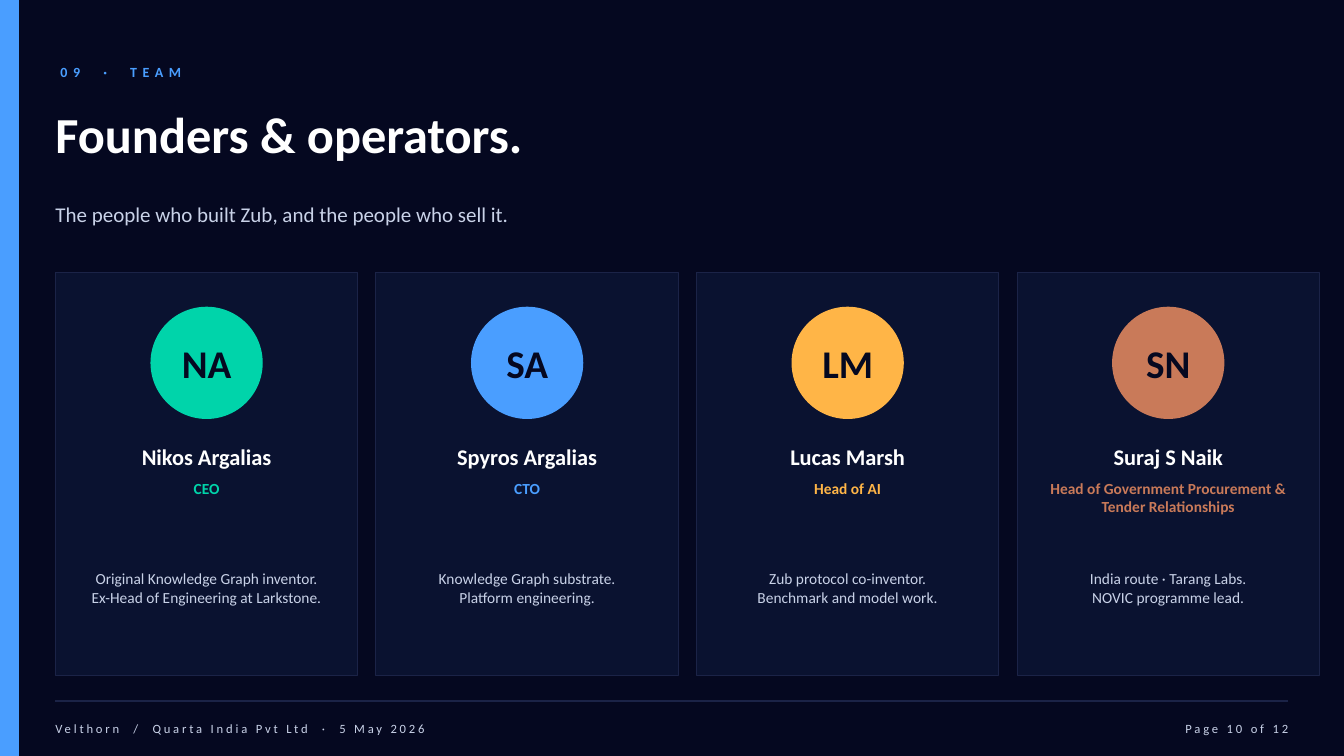
from dataclasses import dataclass

from lxml import etree
from pptx import Presentation
from pptx import util as u
from pptx.dml.color import RGBColor
from pptx.enum import shapes, text
from pptx.oxml import ns

Pt = u.Pt
LEFT, CENTER, RIGHT = text.PP_ALIGN.LEFT, text.PP_ALIGN.CENTER, text.PP_ALIGN.RIGHT
TOP, MIDDLE = text.MSO_ANCHOR.TOP, text.MSO_ANCHOR.MIDDLE


@dataclass(frozen=True)
class Theme:
    font: str = "Calibri"
    ground: str = "050820"
    panel: str = "0A1230"
    rule: str = "1B2347"
    white: str = "FFFFFF"
    soft: str = "C9D2E8"
    green: str = "00D4AA"
    blue: str = "4A9EFF"
    amber: str = "FFB547"
    copper: str = "C97A59"
    title: int = 36
    initials: int = 28
    name: int = 16
    subtitle: int = 15
    detail: int = 11
    eyebrow: int = 10
    footer: int = 9


THEME = Theme()
MARGIN = 39.6
CARD_TOP, CARD_WIDTH, CARD_HEIGHT, CARD_STEP = 194.4, 216, 288, 228.96
CARD_PADDING, AVATAR = 14.4, 79.2

# Initials, name, role, description lines, accent
TEAM = [
    ("NA", "Nikos Argalias", "CEO",
     ["Original Knowledge Graph inventor.", "Ex-Head of Engineering at Larkstone."],
     THEME.green),
    ("SA", "Spyros Argalias", "CTO",
     ["Knowledge Graph substrate.", "Platform engineering."], THEME.blue),
    ("LM", "Lucas Marsh", "Head of AI",
     ["Zub protocol co-inventor.", "Benchmark and model work."], THEME.amber),
    ("SN", "Suraj S Naik", "Head of Government Procurement & Tender Relationships",
     ["India route · Tarang Labs.", "NOVIC programme lead."], THEME.copper),
]


def color(value):
    return RGBColor.from_string(value)


def add_span(para, words, size, ink, bold, tracking):
    span = para.add_run()
    span.text = words
    span.font.name = THEME.font
    span.font.size = Pt(size)
    span.font.bold = bold
    span.font.color.rgb = color(ink)
    if tracking:
        span.font._element.set("spc", str(round(tracking * 100)))


def write(box, lines, *, size, ink=THEME.soft, bold=False, align=LEFT,
          anchor=MIDDLE, tracking=0):
    """Fill a shape; a line given as a tuple gets wide gaps between its parts."""
    frame = box.text_frame
    frame.word_wrap = True
    frame.auto_size = text.MSO_AUTO_SIZE.NONE
    frame.vertical_anchor = anchor
    frame.margin_left = frame.margin_top = frame.margin_right = frame.margin_bottom = 0
    for index, line in enumerate(lines):
        para = frame.add_paragraph() if index else frame.paragraphs[0]
        if box.is_placeholder:
            properties = para._p.get_or_add_pPr()
            properties.set("marL", "0")
            properties.set("indent", "0")
            etree.SubElement(properties, ns.qn("a:buNone"))
        para.alignment = align
        para.space_before = Pt(0)
        parts = line if isinstance(line, tuple) else (line,)
        for position, part in enumerate(parts):
            if position:
                gap = 2 * tracking + 0.23 * size
                add_span(para, " ", size, ink, bold, gap)
            add_span(para, part, size, ink, bold, tracking)


def place(box, left, top, width, height):
    box.left, box.top, box.width, box.height = map(Pt, (left, top, width, height))
    return box


def add_label(page, left, top, width, height, lines, **style):
    box = page.shapes.add_textbox(Pt(left), Pt(top), Pt(width), Pt(height))
    write(box, lines, **style)


def add_block(page, kind, left, top, width, height, fill, line, weight=1):
    block = page.shapes.add_shape(kind, Pt(left), Pt(top), Pt(width), Pt(height))
    block.shadow.inherit = False
    block.fill.solid()
    block.fill.fore_color.rgb = color(fill)
    block.line.color.rgb = color(line)
    block.line.width = Pt(weight)
    return block


def add_rule(page, left, top, width):
    rule = page.shapes.add_connector(
        shapes.MSO_CONNECTOR.STRAIGHT, Pt(left), Pt(top), Pt(left + width), Pt(top))
    rule.line.color.rgb = color(THEME.rule)
    rule.line.width = Pt(1.75)
    etree.SubElement(rule._element.spPr, ns.qn("a:effectLst"))


def add_card(page, left, initials, name, role, description, accent):
    add_block(page, shapes.MSO_SHAPE.RECTANGLE, left, CARD_TOP, CARD_WIDTH, CARD_HEIGHT,
              THEME.panel, THEME.rule, 0.75)
    avatar = add_block(page, shapes.MSO_SHAPE.OVAL, left + (CARD_WIDTH - AVATAR) / 2,
                       CARD_TOP + 25.2, AVATAR, AVATAR, accent, accent)
    write(avatar, [initials], size=THEME.initials, ink=THEME.ground, bold=True, align=CENTER)
    inner, width = left + CARD_PADDING, CARD_WIDTH - 2 * CARD_PADDING
    add_label(page, inner, CARD_TOP + 115.2, width, 32.4, [name],
              size=THEME.name, ink=THEME.white, bold=True, align=CENTER)
    add_label(page, inner, CARD_TOP + 147.6, width, 61.2, [role],
              size=THEME.detail, ink=accent, bold=True, align=CENTER, anchor=TOP)
    add_label(page, inner, CARD_TOP + 212.4, width, 64.8, description,
              size=THEME.detail, align=CENTER, anchor=TOP)


def main():
    deck = Presentation()
    deck.slide_width, deck.slide_height = Pt(960), Pt(540)
    page = deck.slides.add_slide(deck.slide_layouts[1])
    page.background.fill.solid()
    page.background.fill.fore_color.rgb = color(THEME.ground)

    # Heading
    add_block(page, shapes.MSO_SHAPE.RECTANGLE, 0, 0, 12.96, 540, THEME.blue, THEME.blue)
    add_label(page, 43.2, 39.6, 576, 23.04, [("09", "·", "TEAM")],
              size=THEME.eyebrow, ink=THEME.blue, bold=True, tracking=4)
    title = place(page.shapes.title, MARGIN, 64.8, 878.4, 61.2)
    write(title, ["Founders & operators."], size=THEME.title, ink=THEME.white, bold=True)
    subtitle = place(page.placeholders[1], MARGIN, 133.2, 878.4, 39.6)
    write(subtitle, ["The people who built Zub, and the people who sell it."],
          size=THEME.subtitle)

    # Team cards
    for index, member in enumerate(TEAM):
        add_card(page, MARGIN + index * CARD_STEP, *member)

    # Footer
    add_rule(page, MARGIN, 500.76, 880.56)
    add_label(page, MARGIN, 509.76, 576, 21.6,
              [("Velthorn", "/", "Quarta India Pvt Ltd", "·", "5 May 2026")],
              size=THEME.footer, tracking=2)
    add_label(page, 740.16, 509.76, 180, 21.6, ["Page 10 of 12"],
              size=THEME.footer, align=RIGHT, tracking=2)

    deck.save("out.pptx")


if __name__ == "__main__":
    main()
